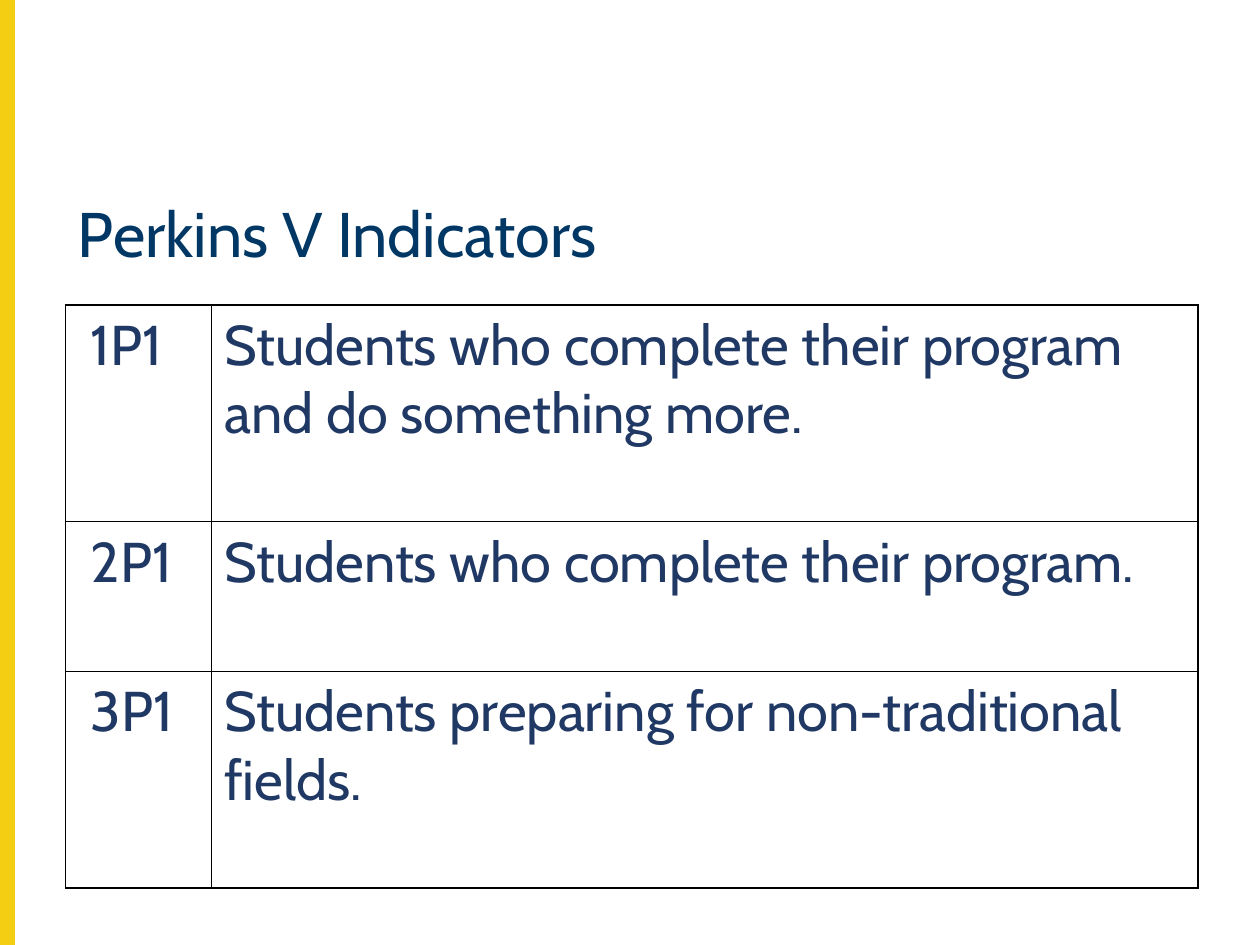
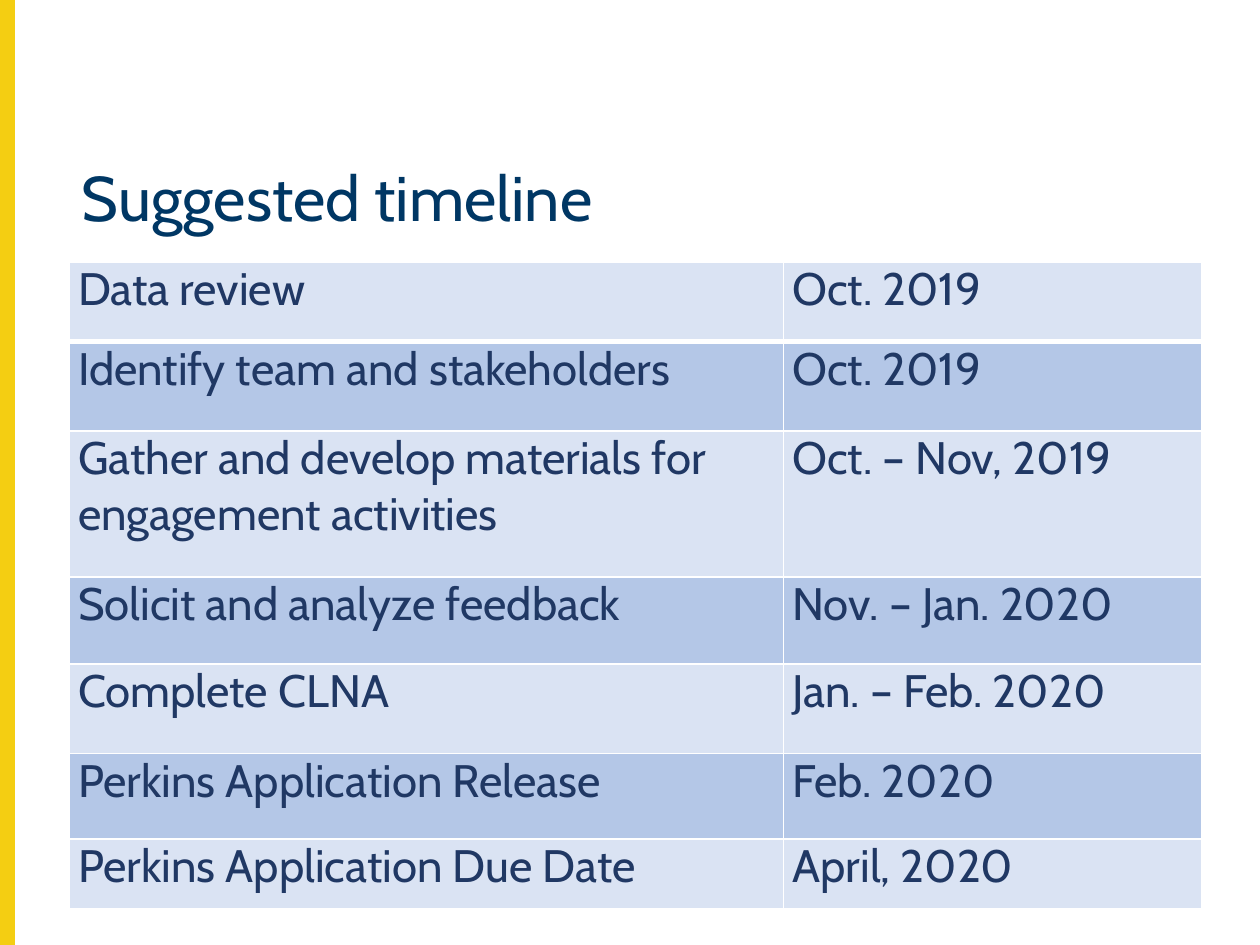
from dataclasses import dataclass

from lxml.etree import SubElement
from pptx import Presentation
from pptx.dml.color import RGBColor as Color
from pptx.enum.shapes import MSO_SHAPE as Shape
from pptx.enum.text import MSO_ANCHOR as Anchor
from pptx.oxml.ns import qn
from pptx.util import Inches, Pt


@dataclass(frozen=True)
class Theme:
    font: str = "Cabin"
    accent: str = "F4CE12"
    title: str = "003764"
    text: str = "203864"
    grid: str = "000000"
    gap: str = "FFFFFF"
    bands: tuple = ("DAE3F3", "B4C7E7")
    title_size: int = 36
    indicator_size: int = 32
    timeline_size: int = 26
    table_width: float = 8.99


THEME = Theme()

INDICATORS = [
    ("1P1", "Students who complete their program and do something more."),
    ("2P1", "Students who complete their program."),
    ("3P1", "Students preparing for non-traditional fields."),
]
INDICATOR_HEIGHTS = [1.72, 1.19, 1.72]

TIMELINE = [
    ("Data review", "Oct. 2019"),
    ("Identify team and stakeholders", "Oct. 2019"),
    ("Gather and develop materials for engagement activities", "Oct. – Nov, 2019"),
    ("Solicit and analyze feedback", "Nov. – Jan. 2020"),
    ("Complete CLNA", "Jan. – Feb. 2020"),
    ("Perkins Application Release", "Feb. 2020"),
    ("Perkins Application Due Date", "April, 2020"),
]
TIMELINE_HEIGHTS = [0.63, 0.71, 1.16, 0.69, 0.71, 0.68, 0.55]


def add_run(paragraph, text, size, color):
    run = paragraph.add_run()
    run.text = text
    run.font.name = THEME.font
    run.font.size = Pt(size)
    run.font.bold = False
    run.font.color.rgb = Color.from_string(color)


def add_titled_slide(presentation, title, left, top):
    """Blank slide with the accent band and a title."""
    slide = presentation.slides.add_slide(presentation.slide_layouts[6])

    # Accent band
    band = slide.shapes.add_shape(
        Shape.RECTANGLE, 0, 0, Inches(0.11), presentation.slide_height)
    band.shadow.inherit = False
    band.fill.solid()
    band.fill.fore_color.rgb = Color.from_string(THEME.accent)
    band.line.color.rgb = Color.from_string(THEME.accent)
    band.line.width = Pt(1)

    # Title
    box = slide.shapes.add_textbox(
        Inches(left), Inches(top), Inches(THEME.table_width), Inches(0.53))
    frame = box.text_frame
    frame.word_wrap = True
    frame.vertical_anchor = Anchor.MIDDLE
    paragraph = frame.paragraphs[0]
    paragraph.line_spacing = 0.9
    add_run(paragraph, title, THEME.title_size, THEME.title)
    return slide


def set_borders(cell, color, top=1, bottom=1):
    """Draw the four cell borders; call before setting the cell's fill."""
    properties = cell._tc.get_or_add_tcPr()
    for side, width in (("L", 1), ("R", 1), ("T", top), ("B", bottom)):
        line = SubElement(properties, qn(f"a:ln{side}"), w=str(Pt(width)))
        fill = SubElement(line, qn("a:solidFill"))
        SubElement(fill, qn("a:srgbClr"), val=color)


def set_fill(cell, color):
    if color is None:
        cell.fill.background()
    else:
        cell.fill.solid()
        cell.fill.fore_color.rgb = Color.from_string(color)


def add_table(slide, left, top, first_width, heights, rows, size, insets,
              border, bands=(None,), header_rule=1):
    """Two-column table; insets holds (left, top) cell margins per column."""
    table = slide.shapes.add_table(
        len(rows), 2, Inches(left), Inches(top),
        Inches(THEME.table_width), Inches(sum(heights))).table
    table.first_row = table.horz_banding = False
    widths = (first_width, THEME.table_width - first_width)
    for column, width in zip(table.columns, widths):
        column.width = Inches(width)

    for index, (texts, height) in enumerate(zip(rows, heights)):
        table.rows[index].height = Inches(height)
        for column, (text, (side, edge)) in enumerate(zip(texts, insets)):
            cell = table.cell(index, column)
            cell.margin_left = Inches(side)
            cell.margin_right = Inches(0.07)
            cell.margin_top = cell.margin_bottom = Inches(edge)
            set_borders(cell, border,
                        top=header_rule if index == 1 else 1,
                        bottom=header_rule if index == 0 else 1)
            set_fill(cell, bands[index % len(bands)])
            add_run(cell.text_frame.paragraphs[0], text, size, THEME.text)


def main():
    presentation = Presentation()
    presentation.slide_width = Inches(10)
    presentation.slide_height = Inches(7.5)

    # Indicators
    slide = add_titled_slide(presentation, "Perkins V Indicators", 0.52, 1.62)
    add_table(slide, 0.52, 2.42, 1.16, INDICATOR_HEIGHTS, INDICATORS,
              THEME.indicator_size, ((0.2, 0.05), (0.1, 0.05)), THEME.grid)

    # Timeline
    slide = add_titled_slide(presentation, "Suggested timeline", 0.55, 1.33)
    add_table(slide, 0.55, 2.08, 5.67, TIMELINE_HEIGHTS, TIMELINE,
              THEME.timeline_size, ((0.07, 0), (0.07, 0)), THEME.gap,
              THEME.bands, header_rule=3)

    presentation.save("out.pptx")


if __name__ == "__main__":
    main()
